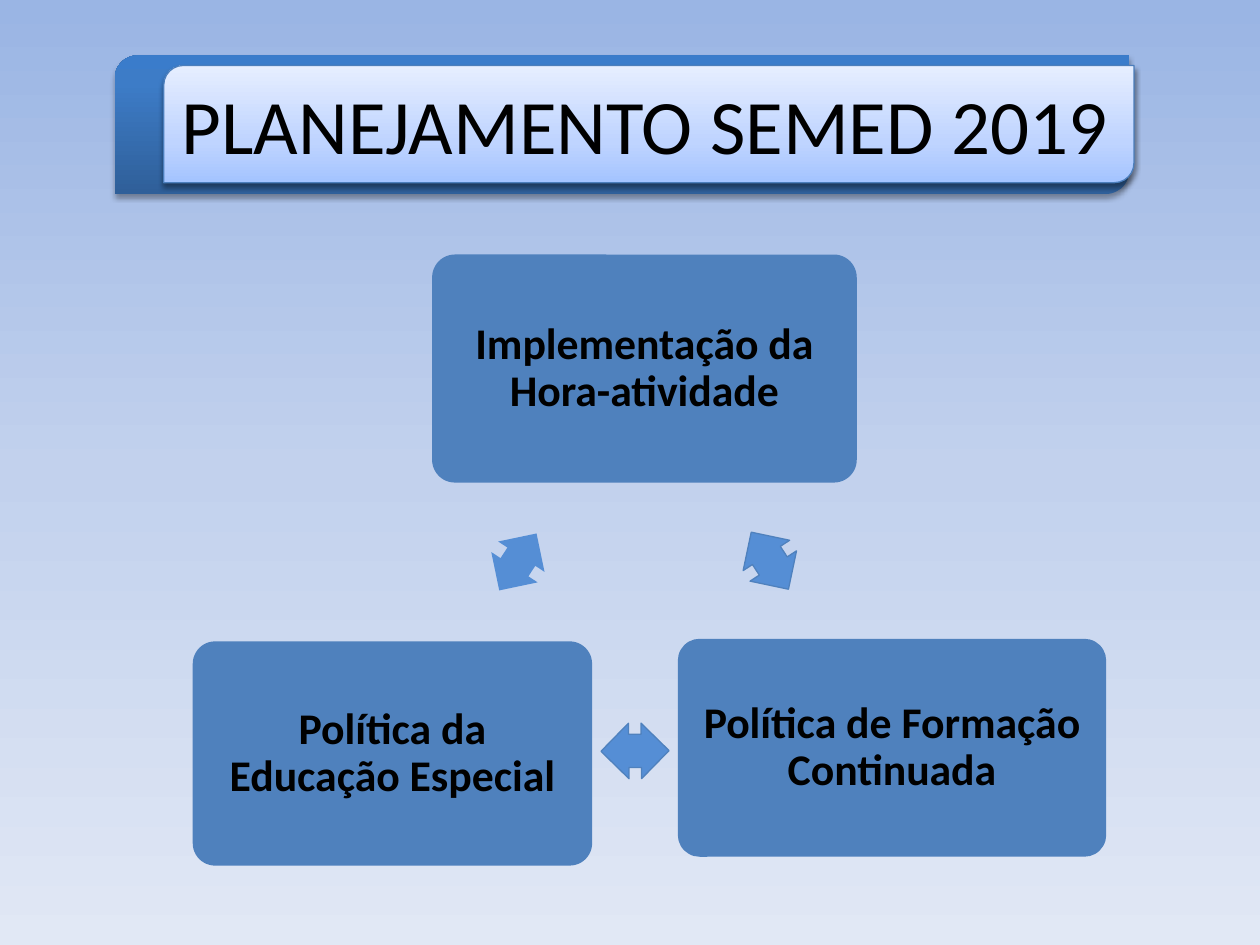
from lxml.etree import SubElement
from pptx import Presentation
from pptx.dml.color import RGBColor
from pptx.enum.shapes import MSO_SHAPE
from pptx.enum.text import MSO_ANCHOR, MSO_AUTO_SIZE, PP_ALIGN
from pptx.oxml.ns import qn
from pptx.util import Inches, Pt


def color(value):
    """Turn a hex string into a colour."""
    return RGBColor.from_string(value)


def set_gradient(fill, element, stops, angle):
    """Give a fill a linear gradient with any number of stops."""
    fill.gradient()
    gradient = element.find(".//" + qn("a:gradFill"))
    stop_list = gradient.find(qn("a:gsLst"))
    for old_stop in list(stop_list):
        stop_list.remove(old_stop)
    for position, value in stops:
        stop = SubElement(stop_list, qn("a:gs"), pos=str(position * 1000))
        SubElement(stop, qn("a:srgbClr"), val=value)
    direction = gradient.find(qn("a:lin"))
    direction.set("ang", str(angle * 60000))
    direction.set("scaled", "0")


def add_shadow(shape, opacity, distance):
    """Drop a soft black shadow straight below a shape."""
    effects = shape.element.spPr.find(qn("a:effectLst"))
    shadow = SubElement(effects, qn("a:outerShdw"), blurRad=str(Pt(3.1)),
                        dist=str(Pt(distance)), dir="5400000", rotWithShape="0")
    black = SubElement(shadow, qn("a:srgbClr"), val="000000")
    SubElement(black, qn("a:alpha"), val=str(opacity * 1000))


def add_block(slide, kind, box, fill=None, line=None):
    """Add a preset shape without the theme's shadow."""
    block = slide.shapes.add_shape(kind, *map(Inches, box))
    block.shadow.inherit = False
    if fill:
        block.fill.solid()
        block.fill.fore_color.rgb = color(fill)
    if line:
        block.line.color.rgb = color(line)
        block.line.width = Pt(0.75)
    else:
        block.line.fill.background()
    return block


def write_text(shape, text, size, bold=False, align=PP_ALIGN.CENTER,
               anchor=MSO_ANCHOR.MIDDLE, spacing=None, after=None, wrap=True):
    """Write one black paragraph into a shape."""
    frame = shape.text_frame
    frame.word_wrap = wrap
    frame.vertical_anchor = anchor
    paragraph = frame.paragraphs[0]
    paragraph.text = text
    paragraph.alignment = align
    paragraph.line_spacing = spacing
    paragraph.space_after = after
    font = paragraph.font
    font.name = "Calibri"
    font.size = Pt(size)
    font.bold = bold
    font.color.rgb = color("000000")


def add_policy(slide, text, box):
    """Add a rounded card naming one policy."""
    card = add_block(slide, MSO_SHAPE.ROUNDED_RECTANGLE, box, "4F81BD")
    card.adjustments[0] = 0.1
    frame = card.text_frame
    frame.margin_left = frame.margin_right = Inches(0.1)
    frame.margin_top = frame.margin_bottom = Inches(0.1)
    write_text(card, text, 25, bold=True, spacing=0.9)


def add_link(slide, left, top, rotation, line=None):
    """Add a double arrow between two cards."""
    link = add_block(slide, MSO_SHAPE.LEFT_RIGHT_ARROW,
                     (left, top, 0.54, 0.44), "558ED5", line)
    link.adjustments[0] = 0.6
    link.adjustments[1] = 0.5
    link.rotation = rotation


def add_title(slide, text):
    """Add the title plate over its dark backing."""
    backing = add_block(slide, MSO_SHAPE.ROUND_2_DIAG_RECTANGLE,
                        (0.91, 0.44, 8.05, 1.1))
    set_gradient(backing.fill, backing.element,
                 [(0, "2F5F99"), (80, "3D7CC7"), (100, "3A7CCB")], 270)
    add_shadow(backing, 35, 1.8)
    plate = add_block(slide, MSO_SHAPE.ROUND_2_DIAG_RECTANGLE,
                      (1.3, 0.52, 7.7, 0.93), line="4B7EBC")
    set_gradient(plate.fill, plate.element,
                 [(0, "A4C4FF"), (35, "BFD4FF"), (100, "E6EEFF")], 270)
    add_shadow(plate, 38, 1.6)
    write_text(plate, text, 44, align=PP_ALIGN.LEFT, anchor=MSO_ANCHOR.TOP,
               after=Pt(6), wrap=False)
    plate.text_frame.auto_size = MSO_AUTO_SIZE.SHAPE_TO_FIT_TEXT


def main():
    """Build the planning slide and save it."""
    deck = Presentation()
    deck.slide_width, deck.slide_height = Inches(10), Inches(7.5)
    slide = deck.slides.add_slide(deck.slide_layouts[6])
    set_gradient(slide.background.fill, slide.element,
                 [(0, "9AB5E4"), (50, "C2D1ED"), (100, "E1E8F5")], 90)
    policies = [
        ("Política de Formação Continuada", (5.38, 5.07, 3.4, 1.73)),
        ("Implementação da Hora-atividade", (3.43, 2.02, 3.37, 1.81)),
        ("Política da Educação Especial", (1.53, 5.09, 3.17, 1.78)),
    ]
    for text, box in policies:
        add_policy(slide, text, box)
    add_link(slide, 5.84, 4.23, 236.9, "4F81BD")
    add_link(slide, 3.84, 4.24, 123.2)
    add_link(slide, 4.77, 5.74, 359.4, "4F81BD")
    add_title(slide, "PLANEJAMENTO SEMED 2019")
    deck.save("out.pptx")


if __name__ == "__main__":
    main()
